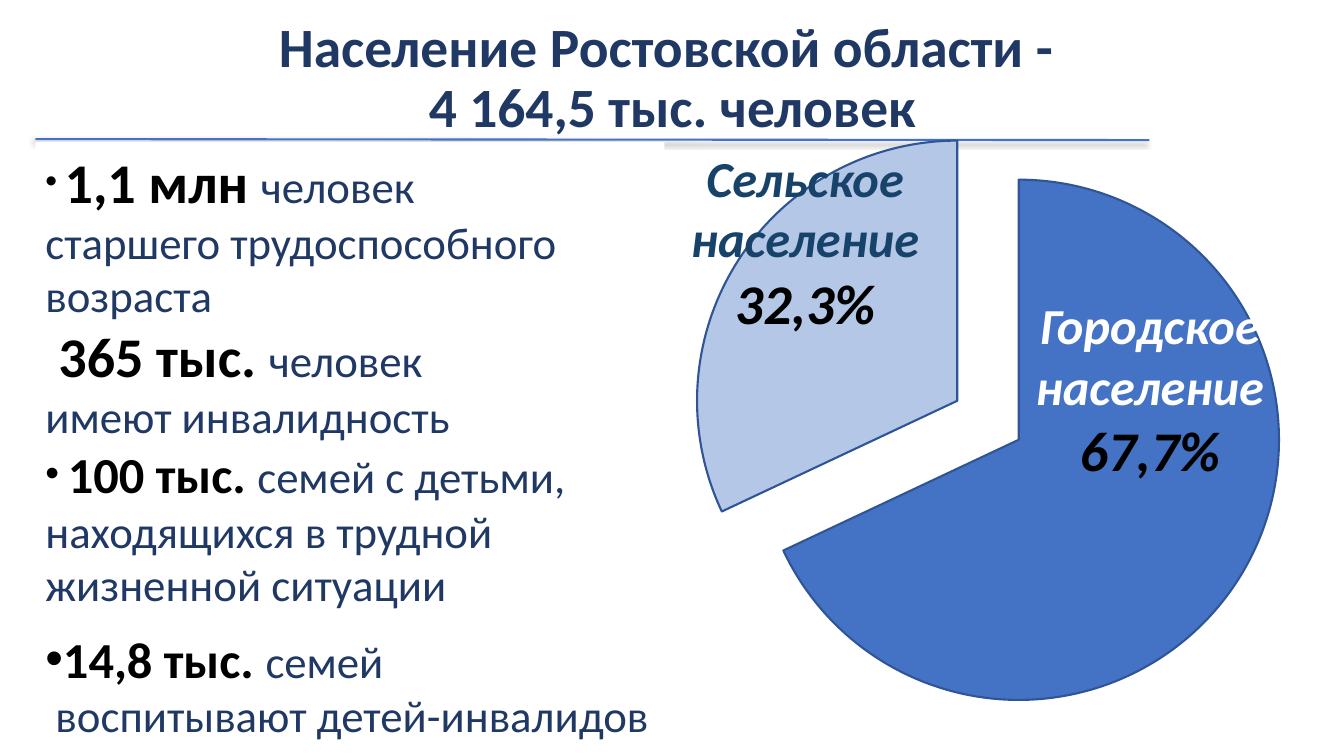
from dataclasses import dataclass

from lxml.etree import SubElement
from pptx import Presentation
from pptx.chart.data import CategoryChartData
from pptx.dml.color import RGBColor
from pptx.enum.chart import XL_CHART_TYPE
from pptx.enum.shapes import MSO_CONNECTOR
from pptx.enum.text import MSO_ANCHOR, MSO_AUTO_SIZE, PP_ALIGN
from pptx.oxml import parse_xml
from pptx.oxml.ns import nsdecls, qn
from pptx.util import Inches, Pt


@dataclass(frozen=True)
class Theme:
    """Colours, font and type sizes of the slide."""
    font: str = "Calibri"
    navy: str = "203864"
    black: str = "000000"
    white: str = "FFFFFF"
    teal: str = "17436A"
    blue: str = "4472C4"
    pale: str = "B4C7E7"
    outline: str = "2F5597"
    title: float = 39.6
    large: float = 40
    medium: float = 36
    body: float = 32
    chart: float = 18
    line: float = 1.5


THEME = Theme()


def colour(code):
    """Turn a hex code into a colour."""
    return RGBColor.from_string(code)


def add_span(para, text, size, code, bold=False, italic=False):
    """Add one formatted run to a paragraph."""
    span = para.add_run()
    span.text = text
    font = span.font
    font.name, font.size, font.bold, font.italic = THEME.font, Pt(size), bold, italic
    font.color.rgb = colour(code)


def place(shape, box):
    """Move a shape to a box given in inches."""
    shape.left, shape.top, shape.width, shape.height = map(Inches, box)


def prepare_frame(shape, anchor):
    """Wrap the text of a shape at a fixed size and return its frame."""
    frame = shape.text_frame
    frame.word_wrap = True
    frame.auto_size = MSO_AUTO_SIZE.NONE
    frame.vertical_anchor = anchor
    return frame


def set_bullet(para, bullet, indent):
    """Set the first-line indent and the bullet of a paragraph."""
    properties = para._p.get_or_add_pPr()
    properties.set("marL", "0")
    properties.set("indent", str(Inches(indent)))
    if bullet:
        SubElement(properties, qn("a:buFont"), typeface="Arial")
        SubElement(properties, qn("a:buChar"), char="•")
    else:
        SubElement(properties, qn("a:buNone"))


def add_title(page, box):
    """Fill the title and draw the rule below it."""
    title = page.shapes.title
    place(title, box)
    para = prepare_frame(title, MSO_ANCHOR.MIDDLE).paragraphs[0]
    para.alignment = PP_ALIGN.CENTER
    para.line_spacing = 0.9
    add_span(para, "Население Ростовской области - ", THEME.title, THEME.navy, True)
    para.add_line_break()
    add_span(para, "4\u00a0164,5\u00a0тыс. человек".replace("\u00a0", " "),
             THEME.title, THEME.navy, True)

    left, top, width, height = box
    rule_top = top + height + 0.21
    rule = page.shapes.add_connector(
        MSO_CONNECTOR.STRAIGHT, Inches(left - 0.57), Inches(rule_top),
        Inches(left + width - 1.02), Inches(rule_top + 0.01))
    rule.line.color.rgb = colour(THEME.blue)
    rule.line.width = Pt(THEME.line)
    rule._element.spPr.append(parse_xml(
        f'<a:effectLst {nsdecls("a")}><a:outerShdw blurRad="{Pt(4)}" dist="{Pt(3)}" '
        f'dir="8100000" algn="tr" rotWithShape="0"><a:srgbClr val="{THEME.black}">'
        '<a:alpha val="40000"/></a:srgbClr></a:outerShdw></a:effectLst>'))


def add_share_label(page, box, lines, share, code):
    """Write a sector name and its share in a box."""
    label = page.shapes.add_textbox(*map(Inches, box))
    para = prepare_frame(label, MSO_ANCHOR.TOP).paragraphs[0]
    para.alignment = PP_ALIGN.CENTER
    add_span(para, lines, THEME.medium, code, True, True)
    para.add_line_break()
    add_span(para, share, THEME.large, THEME.black, True, True)


def add_population_pie(page, box):
    """Draw the exploded pie with its two sector labels."""
    data = CategoryChartData()
    data.categories = ["1", "2"]
    data.add_series("Series 1", [68, 32])
    chart = page.shapes.add_chart(XL_CHART_TYPE.PIE, *map(Inches, box), data).chart
    chart.has_legend = False
    chart.has_title = False
    chart.font.name = THEME.font
    chart.font.size = Pt(THEME.chart)
    chart.font.color.rgb = colour(THEME.black)
    plot = chart.plots[0]
    plot.vary_by_categories = True
    series = plot.series[0]
    for index, code in enumerate((THEME.blue, THEME.pale)):
        sector = series.points[index].format
        sector.fill.solid()
        sector.fill.fore_color.rgb = colour(code)
        sector.line.color.rgb = colour(THEME.outline)
        sector.line.width = Pt(THEME.line)
    for point in series._element.findall(qn("c:dPt")):
        point.find(qn("c:spPr")).addprevious(
            parse_xml(f'<c:explosion {nsdecls("c")} val="14"/>'))

    left, top = box[:2]
    add_share_label(page, (left + 3.65, top + 1.78, 2.79, 1.99),
                    "Городское население", "67,7%", THEME.white)
    add_share_label(page, (left + 0.23, top + 0.32, 2.79, 1.99),
                    "Сельское население", "32,3%", THEME.teal)


def add_group_list(page, box):
    """List the population groups in the body placeholder."""
    groups = [
        (True, 24, 0, 0, "1,1 млн ", THEME.large,
         "человек", "старшего трудоспособного возраста"),
        (False, 0, 0.13, 0, "365 тыс. ", THEME.large, "человек", "имеют инвалидность"),
        (True, 28, 0, 0, "100 тыс. ", THEME.medium,
         "семей с детьми,", "находящихся в трудной жизненной ситуации"),
        (True, 0, 0, 12, "14,8 тыс. ", THEME.medium,
         "семей", " воспитывают детей-инвалидов"),
    ]
    body = page.placeholders[1]
    place(body, box)
    body.fill.solid()
    body.fill.fore_color.rgb = colour(THEME.white)
    body.element.getparent().append(body.element)
    frame = prepare_frame(body, MSO_ANCHOR.TOP)
    for index, group in enumerate(groups):
        bullet, gap, indent, before, number, size, first, rest = group
        para = frame.add_paragraph() if index else frame.paragraphs[0]
        para.alignment = PP_ALIGN.LEFT
        para.line_spacing = 1.0
        para.space_before = Pt(before)
        set_bullet(para, bullet, indent)
        if gap:
            add_span(para, " ", gap, THEME.black)
        add_span(para, number, size, THEME.black, True)
        add_span(para, first, THEME.body, THEME.navy)
        para.add_line_break()
        add_span(para, rest, THEME.body, THEME.navy)


def main():
    """Build the slide and save it."""
    deck = Presentation()
    deck.slide_width, deck.slide_height = Inches(13.33), Inches(7.5)
    page = deck.slides.add_slide(deck.slide_layouts[1])
    add_title(page, (0.92, 0.4, 11.5, 0.77))
    add_population_pie(page, (6.36, 1.09, 6.88, 6.16))
    add_group_list(page, (0.35, 1.41, 6.24, 6.02))
    deck.save("out.pptx")


if __name__ == "__main__":
    main()
